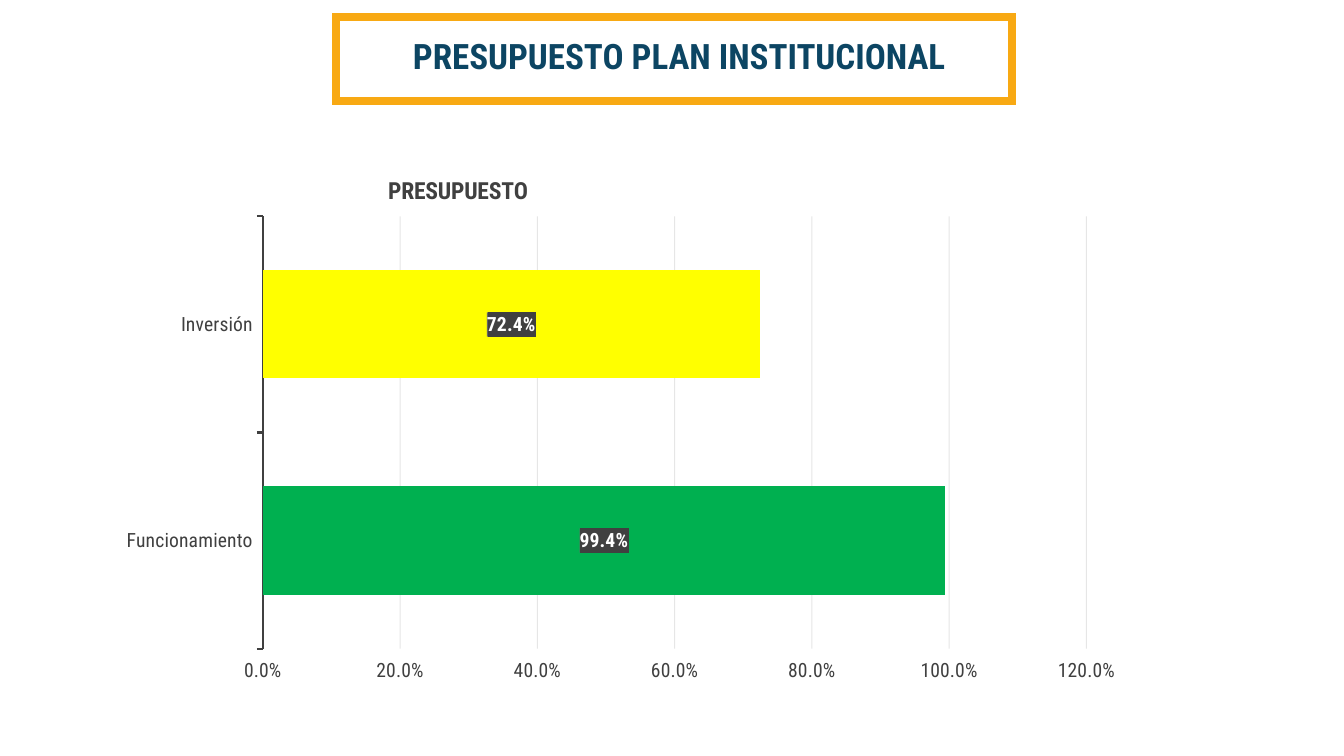
from lxml import etree
from pptx import Presentation
from pptx.chart.data import CategoryChartData
from pptx.dml.color import RGBColor
from pptx.enum.chart import XL_CHART_TYPE, XL_LABEL_POSITION, XL_TICK_MARK
from pptx.enum.shapes import MSO_SHAPE
from pptx.enum.text import MSO_ANCHOR, MSO_AUTO_SIZE, PP_ALIGN
from pptx.oxml import parse_xml
from pptx.oxml.ns import nsdecls, qn
from pptx.util import Pt

BAR_CLUSTERED = XL_CHART_TYPE.BAR_CLUSTERED
LABEL_CENTER = XL_LABEL_POSITION.CENTER
TICK_OUTSIDE = XL_TICK_MARK.OUTSIDE
RECTANGLE = MSO_SHAPE.RECTANGLE
ANCHOR_TOP = MSO_ANCHOR.TOP
NO_AUTOFIT = MSO_AUTO_SIZE.NONE
CENTER = PP_ALIGN.CENTER

FONT = "Roboto Condensed"
DARK = "404040"
PERCENT = "0.0%"
BUDGET = [("Funcionamiento", 0.994, "00B050"), ("Inversión", 0.724, "FFFF00")]


def color(hex_value):
    return RGBColor.from_string(hex_value)


def style_font(font, size, hex_value, bold=False):
    font.name = FONT
    font.size = Pt(size)
    font.bold = bold
    font.color.rgb = color(hex_value)


def manual_layout(parent, before, **places):
    for old in parent.findall(qn("c:layout")):
        parent.remove(old)
    settings = "".join(f'<c:{key} val="{value}"/>' for key, value in places.items())
    layout = parse_xml(
        f'<c:layout {nsdecls("c")}><c:manualLayout>{settings}</c:manualLayout></c:layout>'
    )
    before.addprevious(layout)


def add_heading(slide, left, top, width, height):
    frame = slide.shapes.add_shape(RECTANGLE, Pt(left), Pt(top), Pt(width), Pt(height))
    frame.shadow.inherit = False
    frame.fill.background()
    frame.line.color.rgb = color("F8A913")
    frame.line.width = Pt(6)
    etree.SubElement(frame.line._ln, qn("a:miter"), lim="800000")

    heading = slide.shapes.title
    heading.left, heading.top = Pt(left - 20), Pt(top + 12.2)
    heading.width, heading.height = Pt(width + 47.5), Pt(39.6)
    text = heading.text_frame
    text.text = "PRESUPUESTO PLAN INSTITUCIONAL"
    text.word_wrap = True
    text.auto_size = NO_AUTOFIT
    text.vertical_anchor = ANCHOR_TOP
    paragraph = text.paragraphs[0]
    paragraph.alignment = CENTER
    paragraph.line_spacing = 0.9
    style_font(paragraph.runs[0].font, 25, "0C4563", True)


def style_axes(chart):
    for axis in (chart.category_axis, chart.value_axis):
        axis.major_tick_mark = TICK_OUTSIDE
        style_font(axis.tick_labels.font, 14, DARK)

    categories = chart.category_axis
    categories.has_major_gridlines = False
    categories.format.line.color.rgb = color(DARK)
    categories.format.line.width = Pt(1.5)

    values = chart.value_axis
    values.minimum_scale, values.maximum_scale, values.major_unit = 0, 1.2, 0.2
    values.tick_labels.number_format = PERCENT
    values.tick_labels.number_format_is_linked = False
    values.format.line.fill.background()
    grid = values.major_gridlines.format.line
    grid.color.rgb = color("0D0D0D")
    grid.width = Pt(0.75)
    grid_color = grid._ln.find(".//" + qn("a:srgbClr"))
    etree.SubElement(grid_color, qn("a:alpha"), val="10000")


def style_labels(plot):
    plot.has_data_labels = True
    labels = plot.data_labels
    labels.show_value = True
    labels.number_format = PERCENT
    labels.number_format_is_linked = False
    labels.position = LABEL_CENTER
    style_font(labels.font, 14, "FFFFFF", True)
    labels._element.find(qn("c:txPr")).addprevious(parse_xml(
        f'<c:spPr {nsdecls("c", "a")}><a:pattFill prst="dkVert">'
        f'<a:fgClr><a:srgbClr val="{DARK}"/></a:fgClr>'
        '<a:bgClr><a:srgbClr val="666666"/></a:bgClr>'
        '</a:pattFill><a:ln><a:noFill/></a:ln></c:spPr>'
    ))


def add_budget_chart(slide, left, top, width, height):
    data = CategoryChartData(number_format=PERCENT)
    data.categories = [name for name, _, _ in BUDGET]
    data.add_series("Series 1", [share for _, share, _ in BUDGET])
    chart = slide.shapes.add_chart(
        BAR_CLUSTERED, Pt(left), Pt(top), Pt(width), Pt(height), data
    ).chart
    style_font(chart.font, 14, "000000")
    chart.has_legend = False

    chart.has_title = True
    title = chart.chart_title
    title.text_frame.text = "PRESUPUESTO"
    style_font(title.text_frame.paragraphs[0].runs[0].font, 16.8, DARK, True)
    manual_layout(title._element, title._element.find(qn("c:overlay")),
                  xMode="edge", yMode="edge", x=0.27, y=0.04)

    plot = chart.plots[0]
    plot.gap_width = 100
    plot.vary_by_categories = False
    manual_layout(plot._element.getparent(), plot._element,
                  layoutTarget="inner", xMode="edge", yMode="edge",
                  x=0.1525, y=0.1235, w=0.7995, h=0.794)
    bars = plot.series[0]
    bars.format.fill.solid()
    bars.format.fill.fore_color.rgb = color("5B9BD5")
    for index, (_, _, bar_color) in enumerate(BUDGET):
        fill = bars.points[index].format.fill
        fill.solid()
        fill.fore_color.rgb = color(bar_color)

    style_axes(chart)
    style_labels(plot)


def main():
    deck = Presentation()
    deck.slide_width, deck.slide_height = Pt(960), Pt(540)
    slide = deck.slides.add_slide(deck.slide_layouts[5])
    add_heading(slide, 239.8, 12.2, 483.1, 59.8)
    add_budget_chart(slide, 75.6, 106.6, 735.8, 388.8)
    deck.save("out.pptx")


if __name__ == "__main__":
    main()
